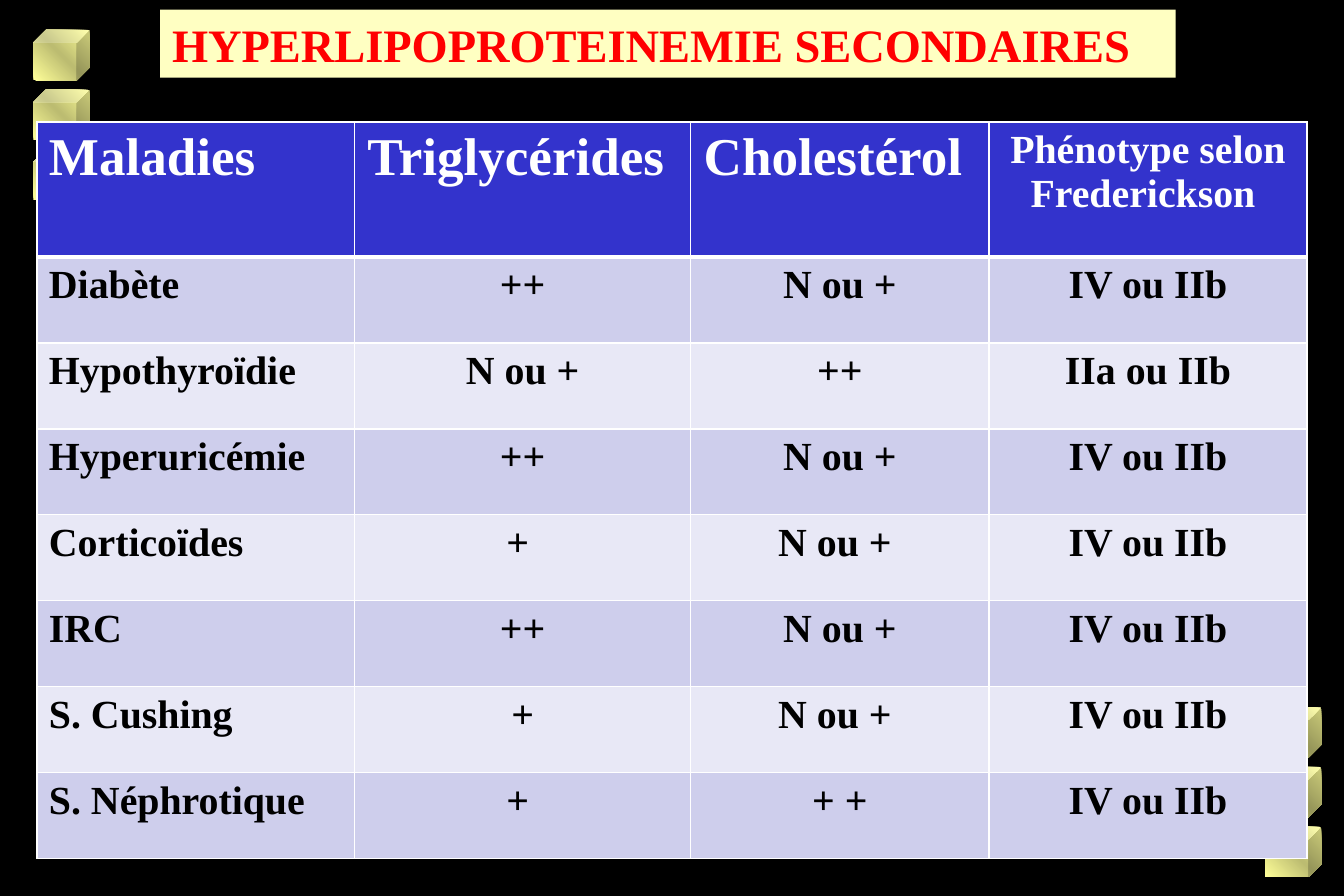
from copy import deepcopy
from lxml.etree import SubElement
from pptx import Presentation
from pptx.dml.color import RGBColor
from pptx.enum.shapes import MSO_SHAPE
from pptx.enum.text import MSO_ANCHOR, PP_ALIGN
from pptx.oxml.ns import qn
from pptx.util import Inches, Pt

# Content
TITLE = "HYPERLIPOPROTEINEMIE SECONDAIRES"
HEADERS = ["Maladies", "Triglycérides ", "Cholestérol ", "Phénotype selon Frederickson "]
ROWS = [
    ("Diabète", "++", "N ou +", "IV ou IIb"),
    ("Hypothyroïdie", "N ou +", "++", "IIa ou IIb"),
    ("Hyperuricémie", "++", "N ou +", "IV ou IIb"),
    ("Corticoïdes", "+ ", "N ou + ", "IV ou IIb"),
    ("IRC", "++", "N ou +", "IV ou IIb"),
    ("S. Cushing", "+", "N ou + ", "IV ou IIb"),
    ("S. Néphrotique", "+ ", "+ +", "IV ou IIb"),
]

# Layout, in inches
COLUMNS = [2.66, 2.81, 2.5, 2.66]
HEADER_HEIGHT, ROW_HEIGHT = 1.13, 0.72
CUBE_STACKS = [(0.28, 0.25), (10.59, 5.92)]
CUBE_STEP = 0.5

# Style
FONT = "Times New Roman"
BLACK = RGBColor(0, 0, 0)
WHITE = RGBColor(255, 255, 255)
RED = RGBColor(255, 0, 0)
CREAM = RGBColor(0xFF, 0xFF, 0xC2)
YELLOW = RGBColor(0xFF, 0xFF, 0x99)
OLIVE = RGBColor(0xBC, 0xBC, 0x71)
BLUE = RGBColor(0x33, 0x33, 0xCC)
BANDS = [RGBColor(0xCE, 0xCE, 0xEC), RGBColor(0xE8, 0xE8, 0xF6)]


def write(tf, text, size, color, align):
    p = tf.paragraphs[0]
    p.alignment = align
    r = p.add_run()
    r.text = text
    for name, value in {"name": FONT, "size": Pt(size), "bold": True}.items():
        setattr(r.font, name, value)
    r.font.color.rgb = color


def add_cube(s, left, top):
    cube = s.shapes.add_shape(MSO_SHAPE.CUBE, Inches(left), Inches(top), Inches(0.47), Inches(0.42))
    cube.shadow.inherit = False
    cube.line.fill.background()
    cube.fill.gradient()
    cube.fill.gradient_angle = 45
    stops = next(cube._element.iter(qn("a:gsLst")))
    stops.insert(1, deepcopy(stops[0]))
    shades = [(0, YELLOW), (0.5, OLIVE), (1, YELLOW)]
    for stop, (position, color) in zip(cube.fill.gradient_stops, shades):
        stop.position = position
        stop.color.rgb = color


def add_borders(cell, widths):
    tcPr = cell._tc.get_or_add_tcPr()
    for i, (side, width) in enumerate(widths.items()):
        ln = SubElement(tcPr, qn(f"a:ln{side}"), w=str(Pt(width)))
        fill = SubElement(ln, qn("a:solidFill"))
        SubElement(fill, qn("a:srgbClr"), val=str(WHITE))
        tcPr.insert(i, ln)


prs = Presentation()
prs.slide_width, prs.slide_height = Inches(11.25), Inches(7.5)
s = prs.slides.add_slide(prs.slide_layouts[5])
s.background.fill.solid()
s.background.fill.fore_color.rgb = BLACK

# Cube stacks
for left, top in CUBE_STACKS:
    for i in range(3):
        add_cube(s, left, top + i * CUBE_STEP)

# Title
title = s.shapes.title
title.left, title.top, title.width, title.height = map(Inches, (1.34, 0.08, 8.5, 0.57))
title.fill.solid()
title.fill.fore_color.rgb = CREAM
title.text_frame.vertical_anchor = MSO_ANCHOR.MIDDLE
write(title.text_frame, TITLE, 28, RED, PP_ALIGN.LEFT)

# Table
heights = [HEADER_HEIGHT] + [ROW_HEIGHT] * len(ROWS)
table = s.shapes.add_table(len(heights), len(COLUMNS), Inches(0.31), Inches(1.02),
                           Inches(sum(COLUMNS)), Inches(sum(heights))).table
for column, width in zip(table.columns, COLUMNS):
    column.width = Inches(width)
for row, height in zip(table.rows, heights):
    row.height = Inches(height)

for i, texts in enumerate([HEADERS, *ROWS]):
    header = i == 0
    for j, text in enumerate(texts):
        cell = table.cell(i, j)
        cell.fill.solid()
        cell.fill.fore_color.rgb = BLUE if header else BANDS[(i - 1) % 2]
        write(cell.text_frame, text, 32 if header and j < 3 else 24,
              WHITE if header else BLACK, PP_ALIGN.CENTER if j else PP_ALIGN.LEFT)
        add_borders(cell, {"L": 1, "R": 1, "T": 3 if i == 1 else 1, "B": 3 if header else 1})

prs.save("out.pptx")
